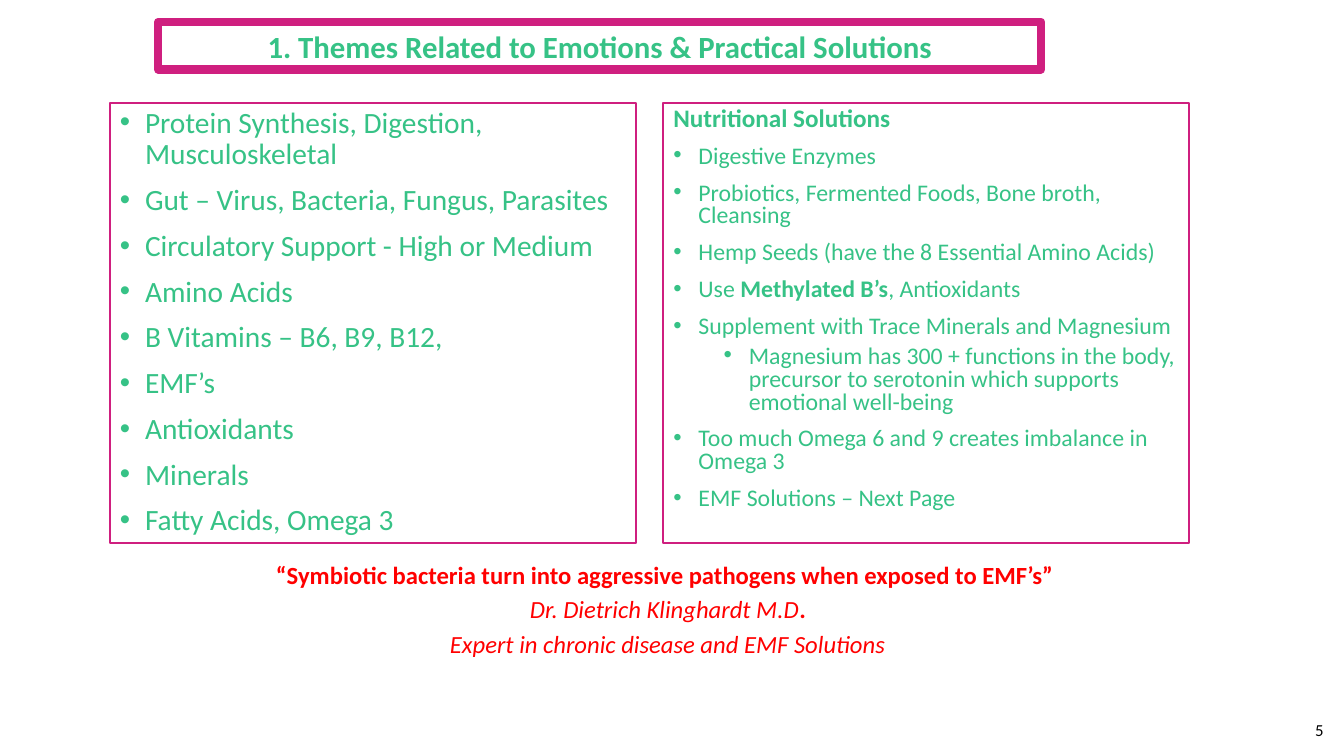
from lxml import etree
from pptx import Presentation
from pptx.dml.color import RGBColor
from pptx.enum.shapes import MSO_SHAPE
from pptx.enum.text import MSO_ANCHOR, PP_ALIGN
from pptx.oxml.ns import qn
from pptx.util import Pt

RECTANGLE = MSO_SHAPE.RECTANGLE
LEFT, CENTER, RIGHT = PP_ALIGN.LEFT, PP_ALIGN.CENTER, PP_ALIGN.RIGHT
TOP, MIDDLE = MSO_ANCHOR.TOP, MSO_ANCHOR.MIDDLE

FONT = "Calibri"
COLORS = {"green": "36C286", "pink": "CF1F7F", "red": "FF0000", "black": "000000"}

COLUMN_LEFT, COLUMN_TOP = 78.5, 73.4
COLUMN_WIDTH, COLUMN_HEIGHT = 375.8, 314.6
COLUMN_STEP = 395.3

THEMES = [
    "Protein Synthesis, Digestion, Musculoskeletal",
    "Gut – Virus, Bacteria, Fungus, Parasites",
    "Circulatory Support - High or Medium",
    "Amino Acids",
    "B Vitamins – B6, B9, B12,",
    "EMF’s",
    "Antioxidants",
    "Minerals",
    "Fatty Acids, Omega 3",
]

SOLUTIONS = [
    (0, [("Digestive Enzymes", "")]),
    (0, [("Probiotics, Fermented Foods, Bone broth, Cleansing", "")]),
    (0, [("Hemp Seeds (have the 8 Essential Amino Acids)", "")]),
    (0, [("Use ", ""), ("Methylated B’s", "b"), (", Antioxidants", "")]),
    (0, [("Supplement with Trace Minerals and Magnesium", "")]),
    (1, [("Magnesium has 300 + functions in the body, precursor to serotonin "
          "which supports emotional well-being", "")]),
    (0, [("Too much Omega 6 and 9 creates imbalance in Omega 3", "")]),
    (0, [("EMF Solutions – Next Page", "")]),
]

QUOTE = [
    [("“Symbiotic bacteria turn into aggressive pathogens when exposed to EMF’s” ", "b")],
    [("Dr. Dietrich Klinghardt M.D", "i"), (".", "b")],
    [("Expert in chronic disease and EMF Solutions", "i")],
]


def color(name):
    return RGBColor.from_string(COLORS[name])


def prepare_frame(shape, anchor):
    frame = shape.text_frame
    frame.word_wrap = True
    frame.vertical_anchor = anchor
    return frame


def add_frame_box(slide, left, top, width, height, line_width, anchor=TOP):
    shape = slide.shapes.add_shape(RECTANGLE, Pt(left), Pt(top), Pt(width), Pt(height))
    shape.shadow.inherit = False
    shape.fill.background()
    shape.line.color.rgb = color("pink")
    shape.line.width = Pt(line_width)
    return prepare_frame(shape, anchor)


def add_text_box(slide, left, top, width, height, anchor=TOP):
    shape = slide.shapes.add_textbox(Pt(left), Pt(top), Pt(width), Pt(height))
    return prepare_frame(shape, anchor)


def add_bullet(paragraph, level):
    paragraph.level = level
    properties = paragraph._p.get_or_add_pPr()
    properties.set("marL", str(Pt(18 + 36 * level)))
    properties.set("indent", str(-Pt(18)))
    etree.SubElement(properties, qn("a:buFont")).set("typeface", "Arial")
    etree.SubElement(properties, qn("a:buChar")).set("char", "•")


def add_paragraph(frame, runs, size, color_name, align=LEFT, spacing=1.0, level=None):
    first = not frame.paragraphs[0].runs
    paragraph = frame.paragraphs[0] if first else frame.add_paragraph()
    paragraph.alignment = align
    paragraph.line_spacing = spacing
    if not first:
        paragraph.space_before = Pt(5 if level == 1 else 10)
    if level is not None:
        add_bullet(paragraph, level)
    for text, style in runs:
        run = paragraph.add_run()
        run.text = text
        run.font.name = FONT
        run.font.size = Pt(size)
        run.font.bold = "b" in style
        run.font.italic = "i" in style
        run.font.color.rgb = color(color_name)


def add_column(slide, index):
    left = COLUMN_LEFT + index * COLUMN_STEP
    return add_frame_box(slide, left, COLUMN_TOP, COLUMN_WIDTH, COLUMN_HEIGHT, 1.5)


def main():
    presentation = Presentation()
    presentation.slide_width = Pt(960)
    presentation.slide_height = Pt(540)
    slide = presentation.slides.add_slide(presentation.slide_layouts[6])

    number = add_text_box(slide, 904.3, 509.8, 48.2, 22.3, MIDDLE)
    add_paragraph(number, [("5", "")], 12, "black", RIGHT)

    title = add_frame_box(slide, 113, 15.8, 630.7, 33.8, 6, MIDDLE)
    heading = "1. Themes Related to Emotions & Practical Solutions"
    add_paragraph(title, [(heading, "b")], 22, "green", CENTER)

    themes = add_column(slide, 0)
    for theme in THEMES:
        add_paragraph(themes, [(theme, "")], 21, "green", spacing=0.9, level=0)

    solutions = add_column(slide, 1)
    add_paragraph(solutions, [("Nutritional Solutions", "b")], 18, "green", spacing=0.8)
    for level, runs in SOLUTIONS:
        add_paragraph(solutions, runs, 17, "green", spacing=0.8, level=level)

    quote = add_text_box(slide, 131.8, 401.8, 690.5, 74.9)
    for runs in QUOTE:
        add_paragraph(quote, runs, 17.6, "red", CENTER, 0.7)

    presentation.save("out.pptx")


if __name__ == "__main__":
    main()
